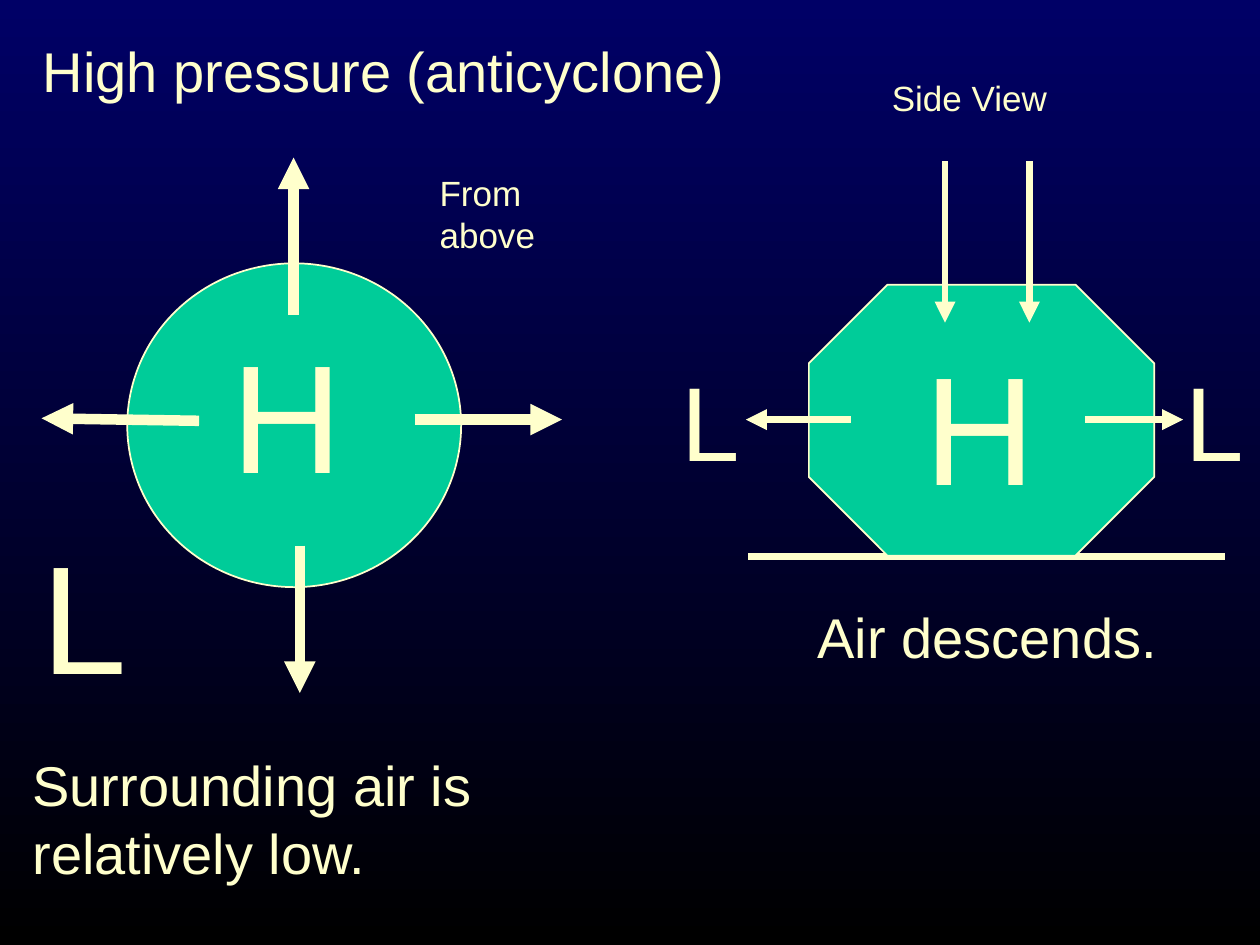
from pptx import Presentation, util as u
from pptx.dml.color import RGBColor
from pptx.enum import shapes, text
from pptx.oxml.ns import qn
from lxml import etree

COLORS = {"top": "000066", "bottom": "000000", "cream": "FFFFCC", "green": "00CC99"}
FONT = "Arial"


def rgb(name):
    return RGBColor.from_string(COLORS[name])


class SlideBuilder:
    def __init__(self, prs):
        self.s = prs.slides.add_slide(prs.slide_layouts[5])

    def background(self):
        fill = self.s.background.fill
        fill.gradient()
        fill.gradient_angle = 270
        for stop, name, position in zip(fill.gradient_stops, ("top", "bottom"), (0, 1)):
            stop.color.rgb = rgb(name)
            stop.position = position

    def format_text(self, sp, content, size, wrap=True):
        tf = sp.text_frame
        tf.text = content
        tf.word_wrap = wrap
        tf.auto_size = text.MSO_AUTO_SIZE.SHAPE_TO_FIT_TEXT
        tf.vertical_anchor = text.MSO_ANCHOR.TOP
        for p in tf.paragraphs:
            p.alignment = text.PP_ALIGN.LEFT
            for r in p.runs:
                r.font.size = u.Pt(size)
                r.font.name = FONT
                r.font.color.rgb = rgb("cream")

    def title(self, content, x, y, w, h):
        sp = self.s.shapes.title
        sp.left, sp.top, sp.width, sp.height = map(u.Inches, (x, y, w, h))
        self.format_text(sp, content, 32)

    def label(self, content, x, y, w, h, size, wrap=True):
        sp = self.s.shapes.add_textbox(*map(u.Inches, (x, y, w, h)))
        self.format_text(sp, content, size, wrap)

    def shape(self, kind, x, y, w, h):
        sp = self.s.shapes.add_shape(kind, *map(u.Inches, (x, y, w, h)))
        sp.shadow.inherit = False
        sp.fill.solid()
        sp.fill.fore_color.rgb = rgb("green")
        sp.line.color.rgb = rgb("cream")
        sp.line.width = u.Pt(1)
        return sp

    def line(self, x1, y1, x2, y2, width, arrow=True):
        c = self.s.shapes.add_connector(
            shapes.MSO_CONNECTOR.STRAIGHT, *map(u.Inches, (x1, y1, x2, y2)))
        c.line.color.rgb = rgb("cream")
        c.line.width = u.Pt(width)
        if arrow:
            etree.SubElement(c.line._get_or_add_ln(), qn("a:tailEnd"), type="triangle")
        etree.SubElement(c._element.spPr, qn("a:effectLst"))


def main():
    prs = Presentation()
    prs.slide_width, prs.slide_height = u.Inches(10), u.Inches(7.5)
    b = SlideBuilder(prs)
    b.background()
    b.title("High pressure (anticyclone)", 0.24, 0.24, 9.59, 0.63)

    b.shape(shapes.MSO_SHAPE.OVAL, 1.01, 2.09, 2.65, 2.57)
    b.label("From\vabove", 3.39, 1.31, 1.68, 0.77, 20)
    b.label("H", 1.74, 2.49, 1.43, 1.56, 88)
    for ends in ((3.29, 3.33, 4.46, 3.33), (2.38, 4.33, 2.38, 5.5),
                 (1.58, 3.34, 0.33, 3.32), (2.33, 2.5, 2.33, 1.25)):
        b.line(*ends, 6)
    b.label("L", 0.23, 4.08, 0.88, 1.56, 88, wrap=False)
    b.label("Surrounding air is relatively low.", 0.16, 5.91, 3.84, 1.18, 32)

    b.label("Side View", 6.98, 0.56, 1.44, 0.43, 20, wrap=False)
    b.line(5.94, 4.42, 9.72, 4.42, 4, arrow=False)
    octagon = b.shape(shapes.MSO_SHAPE.OCTAGON, 6.42, 2.26, 2.74, 2.15)
    octagon.adjustments[0] = 0.29
    b.label("H", 7.24, 2.58, 1.09, 1.56, 88)
    for x in (5.31, 9.31):
        b.label("L", x, 2.78, 0.66, 1.1, 60, wrap=False)
    for x1, x2 in ((6.75, 5.92), (8.61, 9.39)):
        b.line(x1, 3.33, x2, 3.33, 4)
    for x in (7.5, 8.17):
        b.line(x, 1.28, x, 2.56, 4)
    b.label("Air descends.", 6.39, 4.73, 3.19, 0.64, 32)

    prs.save("out.pptx")


if __name__ == "__main__":
    main()
